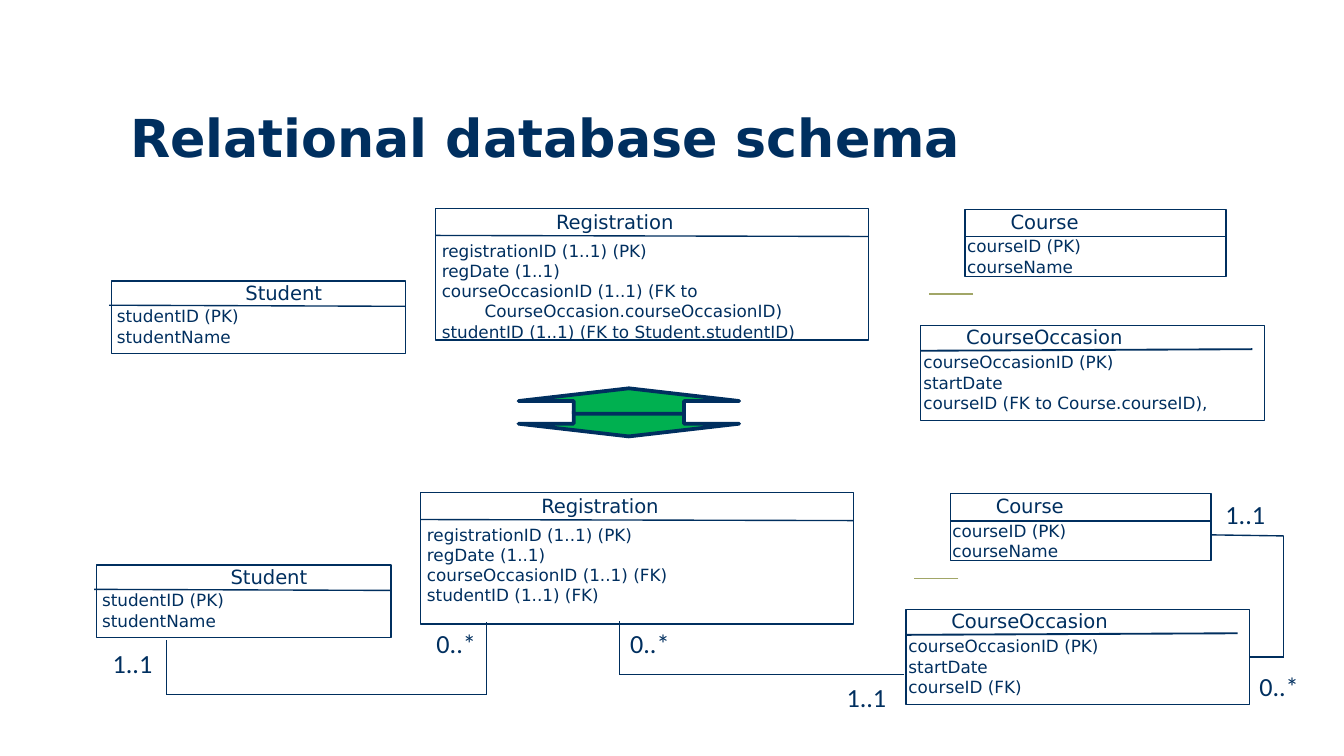
from pptx import Presentation, util as u
from pptx.dml.color import RGBColor
from pptx.enum import shapes, text
from pptx.oxml.ns import qn
from lxml import etree


class Theme:
    navy = RGBColor.from_string("002F5F")
    link = RGBColor.from_string("002E5D")
    olive = RGBColor.from_string("A1A667")
    green = RGBColor.from_string("00B050")
    white = RGBColor.from_string("FFFFFF")
    sans = "DejaVu Sans"
    label = "Calibri"
    title, head, body, count = 28, 10.5, 9, 14
    thin, mid, thick = 0.75, 1, 2


deck = Presentation()
deck.slide_width, deck.slide_height = u.Cm(25.4), u.Cm(14.29)
slide = deck.slides.add_slide(deck.slide_layouts[6])


def write(x, y, w, h, rows, size, face=Theme.sans, wrap=True):
    box = slide.shapes.add_textbox(u.Cm(x), u.Cm(y), u.Cm(w), u.Cm(h))
    frame = box.text_frame
    frame.word_wrap = wrap
    frame.auto_size = text.MSO_AUTO_SIZE.SHAPE_TO_FIT_TEXT
    for i, row in enumerate(rows):
        para = frame.paragraphs[0] if i == 0 else frame.add_paragraph()
        run = para.add_run()
        run.text = row
        run.font.size = u.Pt(size)
        run.font.name = face
        run.font.color.rgb = Theme.navy
    return frame


def draw(x1, y1, x2, y2, color=Theme.navy, width=Theme.thin):
    line = slide.shapes.add_connector(
        shapes.MSO_CONNECTOR.STRAIGHT, u.Cm(x1), u.Cm(y1), u.Cm(x2), u.Cm(y2))
    line.line.color.rgb = color
    line.line.width = u.Pt(width)
    etree.SubElement(line._element.spPr, qn("a:effectLst"))
    return line


title = write(2.21, 1.75, 19.02, 1.65, ["Relational database schema"], Theme.title)
title.auto_size = text.MSO_AUTO_SIZE.NONE
title.vertical_anchor = text.MSO_ANCHOR.MIDDLE
title.paragraphs[0].runs[0].font.bold = True

tables = [
    ("Student", (2.11, 5.31, 5.56, 1.37), (2.06, 5.77, 7.67, 5.79), Theme.thin,
     (4.39, 5.18, 2.92), (1.96, 5.66, 2.92)),
    ("Course", (18.24, 3.96, 4.93, 1.27), (18.24, 4.47, 23.16, 4.47), Theme.mid,
     (18.85, 3.84, 2.92), (18.03, 4.34, 5.28)),
    ("CourseOccasion", (17.4, 6.15, 6.5, 1.8), (17.4, 6.63, 23.67, 6.6), Theme.mid,
     (18.01, 6.02, 3.73), (17.2, 6.53, 6.98)),
    ("Registration", (8.23, 3.94, 8.18, 2.49), (8.23, 4.45, 16.41, 4.47), Theme.thin,
     (10.26, 3.84, 2.92), (8.1, 4.42, 8.74)),
]
student = ["studentID (PK)", "studentName"]
course = ["courseID (PK)", "courseName"]
event = ["courseOccasionID (PK)", "startDate"]
entry = ["registrationID (1..1) (PK)", "regDate (1..1)"]
above = {
    "Student": student,
    "Course": course,
    "CourseOccasion": event + ["courseID (FK to Course.courseID),"],
    "Registration": entry + [
        "courseOccasionID (1..1) (FK to",
        "CourseOccasion.courseOccasionID)",
        "studentID (1..1) (FK to Student.studentID)"],
}
below = {
    "Student": student,
    "Course": course,
    "CourseOccasion": event + ["courseID (FK)"],
    "Registration": entry + ["courseOccasionID (1..1) (FK)", "studentID (1..1) (FK)"],
}

boxes = {}
for dx, dy, fields in ((0, 0, above), (-0.28, 5.37, below)):
    draw(18.39 + dx, 5.56 + dy, 17.55 + dx, 5.56 + dy, Theme.olive)
    for name, (x, y, w, h), (x1, y1, x2, y2), width, head, body in tables:
        box = slide.shapes.add_shape(
            shapes.MSO_SHAPE.RECTANGLE, u.Cm(x + dx), u.Cm(y + dy), u.Cm(w), u.Cm(h))
        box.shadow.inherit = False
        box.fill.solid()
        box.fill.fore_color.rgb = Theme.white
        box.line.color.rgb = Theme.navy
        box.line.width = u.Pt(Theme.thin)
        boxes[name] = box
        draw(x1 + dx, y1 + dy, x2 + dx, y2 + dy, width=width)
        write(head[0] + dx, head[1] + dy, head[2], 0.71, [name], Theme.head)
        rows = fields[name]
        frame = write(body[0] + dx, body[1] + dy, body[2],
                      0.25 + 0.39 * len(rows), rows, Theme.body)
        for para in frame.paragraphs:
            if para.text.startswith("CourseOccasion."):
                para._p.get_or_add_pPr().set("marL", str(u.Cm(0.81)))

for ends in (
    (17.09, 12.75, 11.71, 12.75),
    (11.71, 12.75, 11.71, 11.73),
    (3.15, 13.13, 3.15, 12.09),
    (9.19, 13.13, 3.15, 13.13),
    (9.19, 13.13, 9.19, 11.76),
    (24.26, 10.13, 22.89, 10.11),
    (24.26, 12.42, 24.26, 10.13),
):
    draw(*ends, Theme.link)
link = draw(24.26, 12.42, 23.62, 12.42, Theme.link)
link.end_connect(boxes["CourseOccasion"], 3)

for x, y, count in (
    (8, 11.73, "0..*"), (1.88, 12.12, "1..1"), (15.75, 12.75, "1..1"),
    (11.66, 11.73, "0..*"), (22.91, 9.3, "1..1"), (23.55, 12.55, "0..*"),
):
    write(x, y, 1.27, 0.86, [count], Theme.count, Theme.label, False)

for y, turn in ((7.77, 0), (7.34, 180)):
    arrow = slide.shapes.add_shape(
        shapes.MSO_SHAPE.DOWN_ARROW, u.Cm(9.8), u.Cm(y), u.Cm(4.17), u.Cm(0.48))
    arrow.rotation = turn
    arrow.shadow.inherit = False
    arrow.fill.solid()
    arrow.fill.fore_color.rgb = Theme.green
    arrow.line.color.rgb = Theme.navy
    arrow.line.width = u.Pt(Theme.thick)

deck.save("out.pptx")
